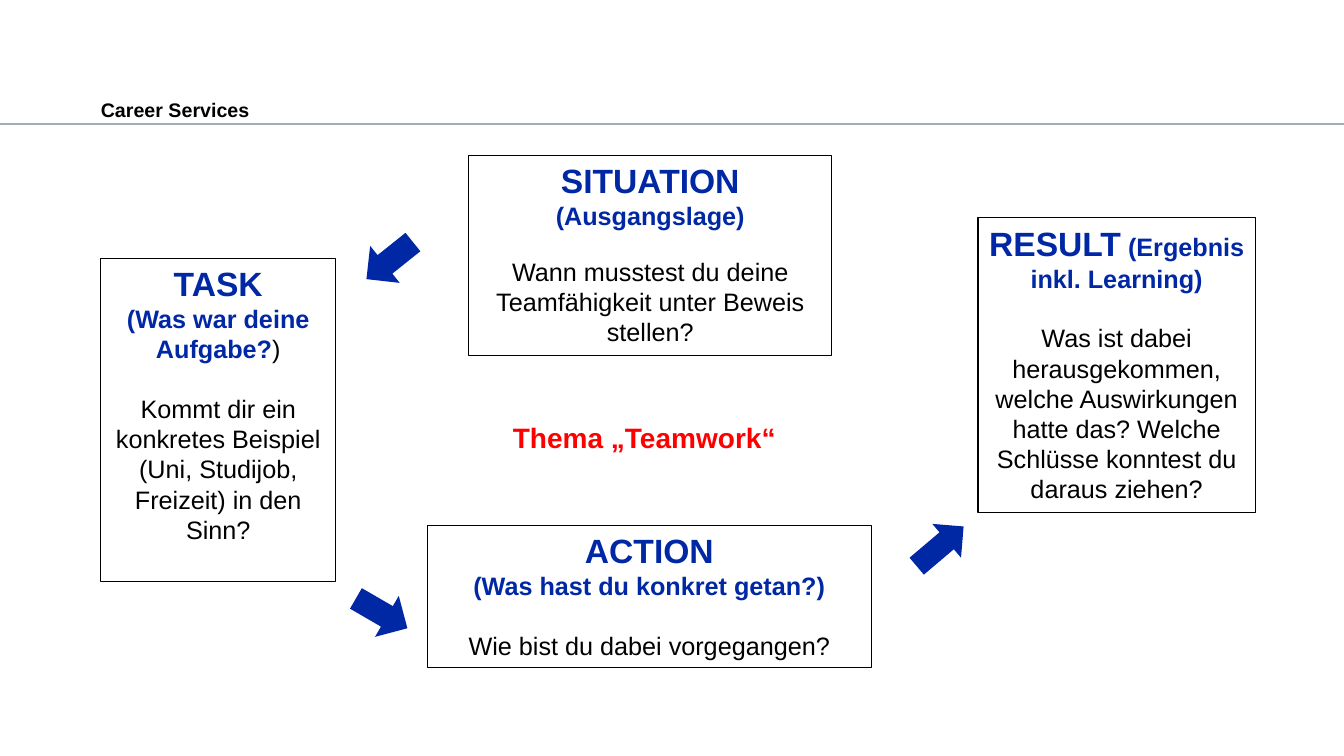
from lxml.etree import SubElement
from pptx import Presentation
from pptx.dml.color import RGBColor
from pptx.enum.shapes import MSO_CONNECTOR, MSO_SHAPE
from pptx.enum.text import MSO_ANCHOR, PP_ALIGN
from pptx.oxml.ns import qn
from pptx.util import Inches, Pt

BLUE, BLACK, RED, GREY = "0028A5", "000000", "FF0000", "A3ADB7"

# left, top, width, height, then paragraphs of (space before, runs);
# a run is text, size, colour, bold
STAR_BOXES = [
    (1, 2.56, 2.33, 3.21, [
        (0, [("TASK", 24, BLUE, True)]),
        (0, [("(Was war deine Aufgabe?", 18, BLUE, True), (")", 18, BLACK, False)]),
        (21, [("Kommt dir ein konkretes Beispiel (Uni, Studijob, Freizeit) in den Sinn?",
               18, BLACK, False)]),
    ]),
    (4.65, 1.54, 3.6, 1.99, [
        (0, [("SITUATION", 24, BLUE, True), (" (Ausgangslage)", 18, BLUE, True)]),
        (18, [("Wann musstest du deine Teamfähigkeit unter Beweis stellen?",
               18, BLACK, False)]),
    ]),
    (4.24, 5.21, 4.4, 1.41, [
        (0, [("ACTION", 24, BLUE, True)]),
        (0, [("(Was hast du konkret getan?)", 18, BLUE, True)]),
        (21, [("Wie bist du dabei vorgegangen?", 18, BLACK, False)]),
    ]),
    (9.7, 2.16, 2.75, 2.93, [
        (0, [("RESULT", 24, BLUE, True), (" (Ergebnis inkl. Learning)", 18, BLUE, True)]),
        (21, [("Was ist dabei herausgekommen, welche Auswirkungen hatte das? "
               "Welche Schlüsse konntest du daraus ziehen?", 18, BLACK, False)]),
    ]),
]

# left, top, width, height, rotation
ARROWS = [
    (3.57, 2.35, 0.59, 0.47, 141.4),
    (3.49, 5.85, 0.59, 0.47, 30.1),
    (9.02, 5.2, 0.61, 0.44, 319.7),
]


def color(hex_string):
    return RGBColor.from_string(hex_string)


def add_span(para, text, size, hex_string, bold):
    span = para.add_run()
    span.text = text
    span.font.name = "Arial"
    span.font.size = Pt(size)
    span.font.bold = bold
    span.font.color.rgb = color(hex_string)


def add_header(slide):
    rule = slide.shapes.add_connector(
        MSO_CONNECTOR.STRAIGHT, 0, Inches(1.23), Inches(13.33), Inches(1.23))
    rule.line.color.rgb = color(GREY)
    rule.line.width = Pt(1.25)
    SubElement(rule._element.spPr, qn("a:effectLst"))

    box = slide.shapes.add_textbox(Inches(1), Inches(0.93), Inches(8.02), Inches(0.25))
    frame = box.text_frame
    frame.word_wrap = True
    frame.margin_left = frame.margin_right = frame.margin_bottom = 0
    frame.margin_top = Inches(0.04)
    add_span(frame.paragraphs[0], "Career Services", 14, BLACK, True)


def set_title(slide, text):
    title = slide.shapes.title
    title.left, title.top = Inches(4.19), Inches(4.12)
    title.width, title.height = Inches(4.4), Inches(0.44)
    frame = title.text_frame
    frame.word_wrap = True
    frame.vertical_anchor = MSO_ANCHOR.TOP
    para = frame.paragraphs[0]
    para.alignment = PP_ALIGN.CENTER
    add_span(para, text, 20, RED, True)


def add_star_box(slide, left, top, width, height, paragraphs):
    box = slide.shapes.add_shape(
        MSO_SHAPE.RECTANGLE, Inches(left), Inches(top), Inches(width), Inches(height))
    box.shadow.inherit = False
    box.fill.background()
    box.line.color.rgb = color(BLACK)
    box.line.width = Pt(0.75)
    frame = box.text_frame
    frame.word_wrap = True
    frame.vertical_anchor = MSO_ANCHOR.TOP
    for index, (space, runs) in enumerate(paragraphs):
        para = frame.add_paragraph() if index else frame.paragraphs[0]
        para.alignment = PP_ALIGN.CENTER
        if space:
            para.space_before = Pt(space)
        for run in runs:
            add_span(para, *run)


def add_arrow(slide, left, top, width, height, rotation):
    arrow = slide.shapes.add_shape(
        MSO_SHAPE.RIGHT_ARROW, Inches(left), Inches(top), Inches(width), Inches(height))
    arrow.shadow.inherit = False
    arrow.rotation = rotation
    arrow.fill.solid()
    arrow.fill.fore_color.rgb = color(BLUE)
    arrow.line.fill.background()


def main():
    deck = Presentation()
    deck.slide_width, deck.slide_height = Inches(13.33), Inches(7.5)
    slide = deck.slides.add_slide(deck.slide_layouts.get_by_name("Title Only"))
    add_header(slide)
    set_title(slide, "Thema „Teamwork“")
    for star_box in STAR_BOXES:
        add_star_box(slide, *star_box)
    for arrow in ARROWS:
        add_arrow(slide, *arrow)
    deck.save("out.pptx")


if __name__ == "__main__":
    main()
